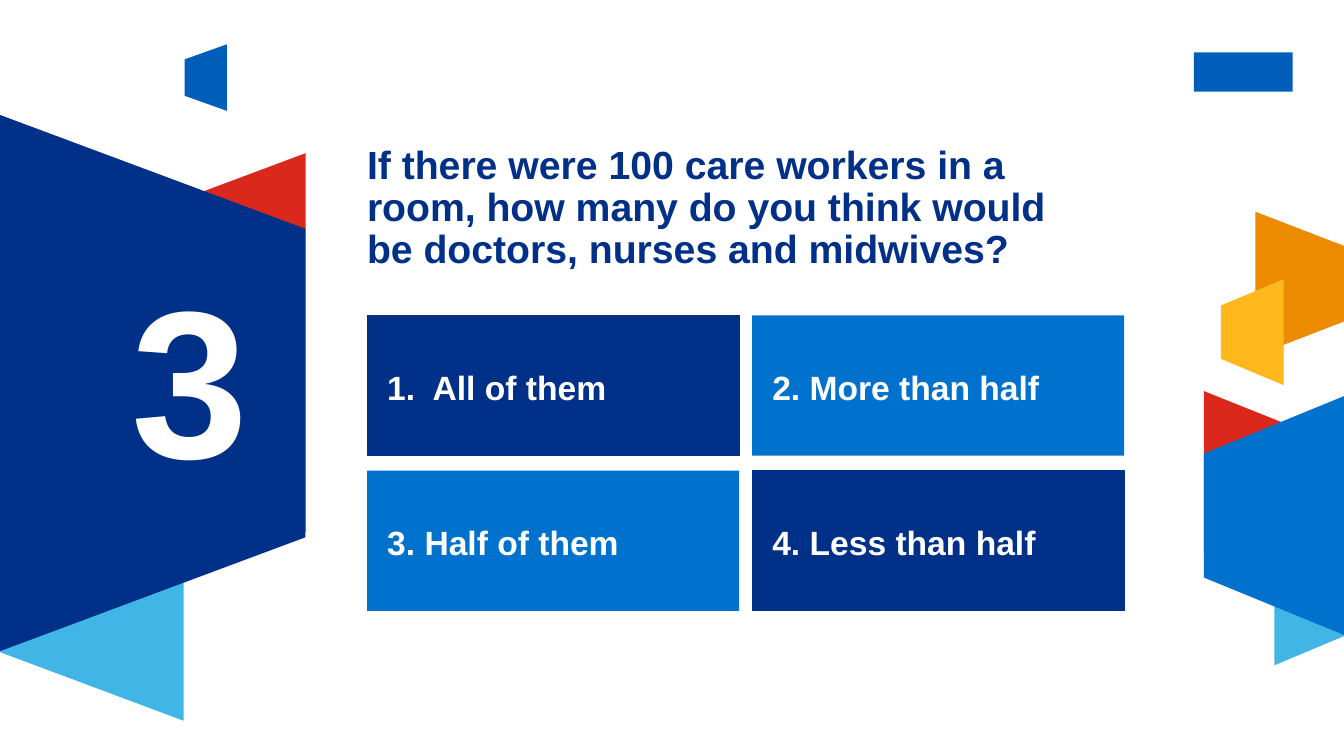
from pptx import Presentation
from pptx.dml.color import RGBColor
from pptx.enum.shapes import MSO_SHAPE
from pptx.enum.text import MSO_ANCHOR
from pptx.util import Inches, Pt

NAVY = RGBColor(0x00, 0x30, 0x87)
BLUE = RGBColor(0x00, 0x72, 0xCE)
LOGO_BLUE = RGBColor(0x00, 0x5E, 0xBB)
SKY = RGBColor(0x41, 0xB6, 0xE6)
RED = RGBColor(0xDA, 0x29, 0x1C)
ORANGE = RGBColor(0xED, 0x8B, 0x00)
YELLOW = RGBColor(0xFF, 0xB8, 0x1C)
WHITE = RGBColor(0xFF, 0xFF, 0xFF)

FONT = "Arial"
SLIDE_W, SLIDE_H = 13.33, 7.5


def paint(sp, color):
    sp.fill.solid()
    sp.fill.fore_color.rgb = color
    sp.line.fill.background()
    sp.shadow.inherit = False


def set_margins(tf, left=0, top=0, right=0, bottom=0):
    tf.word_wrap = True
    tf.margin_left, tf.margin_top = Inches(left), Inches(top)
    tf.margin_right, tf.margin_bottom = Inches(right), Inches(bottom)


def format_text(p, size, color):
    p.line_spacing = 0.9
    for r in p.runs:
        r.font.name = FONT
        r.font.size = Pt(size)
        r.font.bold = True
        r.font.color.rgb = color


def add_panel(slide, x, y, w, h, inset, tall_side, color):
    left_inset, right_inset = (0, inset) if tall_side == "left" else (inset, 0)
    corners = [
        (x, y + left_inset),
        (x + w, y + right_inset),
        (x + w, y + h - right_inset),
        (x, y + h - left_inset),
    ]
    points = [(Inches(px), Inches(py)) for px, py in corners]
    builder = slide.shapes.build_freeform(*points[0])
    builder.add_line_segments(points[1:], close=True)
    paint(builder.convert_to_shape(), color)


def add_header(slide, x, y, w):
    add_panel(slide, x + 1.31, y, 0.42, 0.66, 0.15, "right", LOGO_BLUE)
    badge_w = 0.98
    badge = slide.shapes.add_shape(
        MSO_SHAPE.RECTANGLE, Inches(x + w - badge_w), Inches(y + 0.08),
        Inches(badge_w), Inches(0.39))
    paint(badge, LOGO_BLUE)


def add_number_side(slide, x, y, number):
    add_panel(slide, x + 1.24, y + 0.38, 1.79, 3.76, 0.67, "right", RED)
    add_panel(slide, x, y + 2.22, 1.82, 3.79, 0.68, "right", SKY)
    add_panel(slide, x, y, 3.03, 5.32, 1.13, "left", NAVY)
    box = slide.shapes.add_textbox(
        Inches(x + 1.3), Inches(y + 1.61), Inches(1.37), Inches(2))
    tf = box.text_frame
    tf.text = number
    set_margins(tf)
    format_text(tf.paragraphs[0], 150, WHITE)


def add_right_side(slide, x, y, w):
    add_panel(slide, x + 0.51, y, w - 0.51, 1.43, 0.34, "left", ORANGE)
    add_panel(slide, x + 0.7, y + 3.01, w - 0.7, 1.49, 0.29, "left", SKY)
    add_panel(slide, x, y + 1.78, 0.95, 1.61, 0.38, "left", RED)
    add_panel(slide, x, y + 1.83, w, 2.37, 0.57, "right", BLUE)
    add_panel(slide, x + 0.17, y + 0.67, 0.62, 1.05, 0.26, "right", YELLOW)


def add_question(slide, x, y, w, h, lines):
    box = slide.shapes.add_textbox(Inches(x), Inches(y), Inches(w), Inches(h))
    tf = box.text_frame
    set_margins(tf)
    p = tf.paragraphs[0]
    for i, line in enumerate(lines):
        if i:
            p.add_line_break()
        p.add_run().text = line
    format_text(p, 28, NAVY)


def add_answers(slide, x, y, w, h, answers):
    gap_x, gap_y = 0.13, 0.15
    cell_w, cell_h = (w - gap_x) / 2, (h - gap_y) / 2
    for i, answer in enumerate(answers):
        row, col = divmod(i, 2)
        sp = slide.shapes.add_shape(
            MSO_SHAPE.RECTANGLE,
            Inches(x + col * (cell_w + gap_x)), Inches(y + row * (cell_h + gap_y)),
            Inches(cell_w), Inches(cell_h))
        color = NAVY if row == col else BLUE
        paint(sp, color)
        if color == NAVY:
            sp.line.color.rgb = NAVY
            sp.line.width = Pt(0.75)
        tf = sp.text_frame
        tf.text = answer
        tf.vertical_anchor = MSO_ANCHOR.MIDDLE
        set_margins(tf, 0.2, 0.08, 0.08, 0)
        p = tf.paragraphs[0]
        p.alignment = 1
        p.space_before = Pt(10)
        format_text(p, 24, WHITE)


def add_quiz_slide(prs):
    slide = prs.slides.add_slide(prs.slide_layouts[6])
    add_header(slide, 0.52, 0.44, 12.3)
    add_number_side(slide, 0, 1.14, "3")
    add_right_side(slide, 11.94, 2.1, SLIDE_W - 11.94)
    add_question(slide, 3.64, 1.44, 7.71, 1.39, [
        "If there were 100 care workers in a",
        "room, how many do you think would",
        "be doctors, nurses and midwives?",
    ])
    add_answers(slide, 3.64, 3.13, 7.51, 2.93, [
        "1.  All of them",
        "2. More than half",
        "3. Half of them",
        "4. Less than half",
    ])


def main():
    prs = Presentation()
    prs.slide_width, prs.slide_height = Inches(SLIDE_W), Inches(SLIDE_H)
    add_quiz_slide(prs)
    prs.save("out.pptx")


if __name__ == "__main__":
    main()
